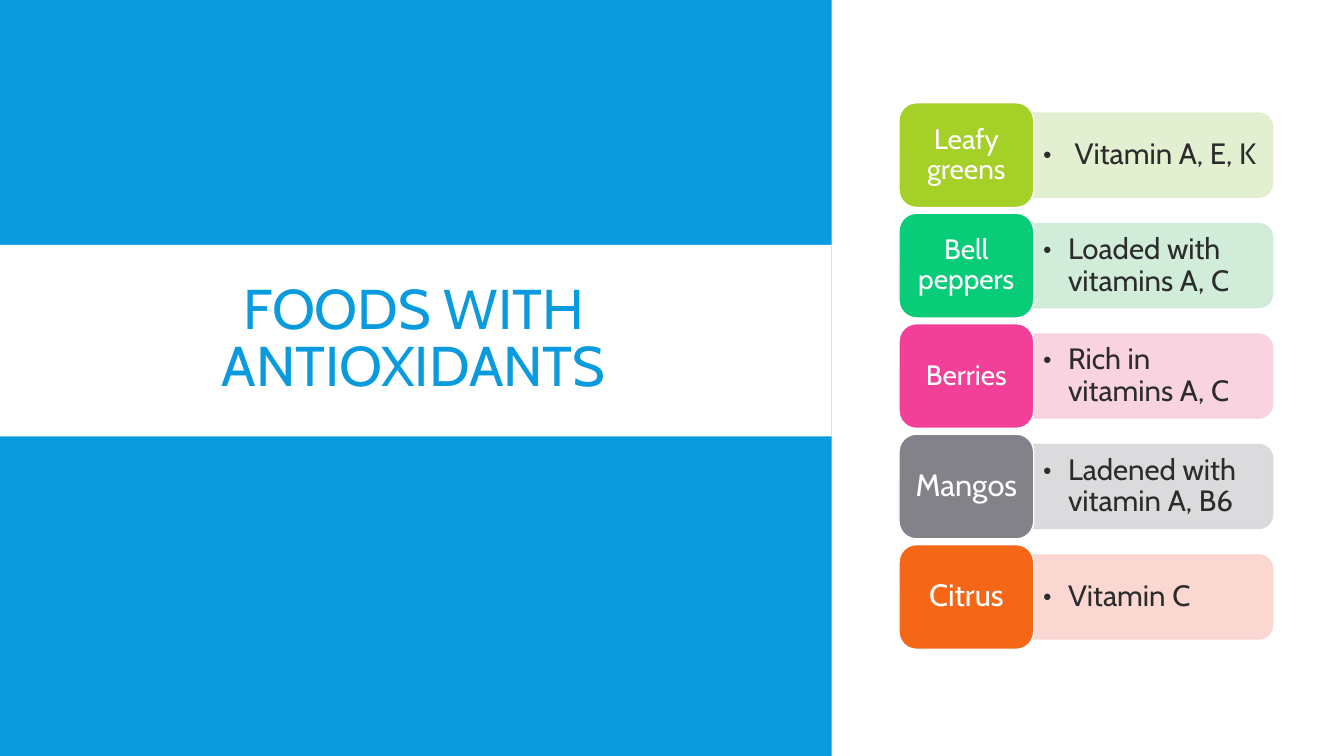
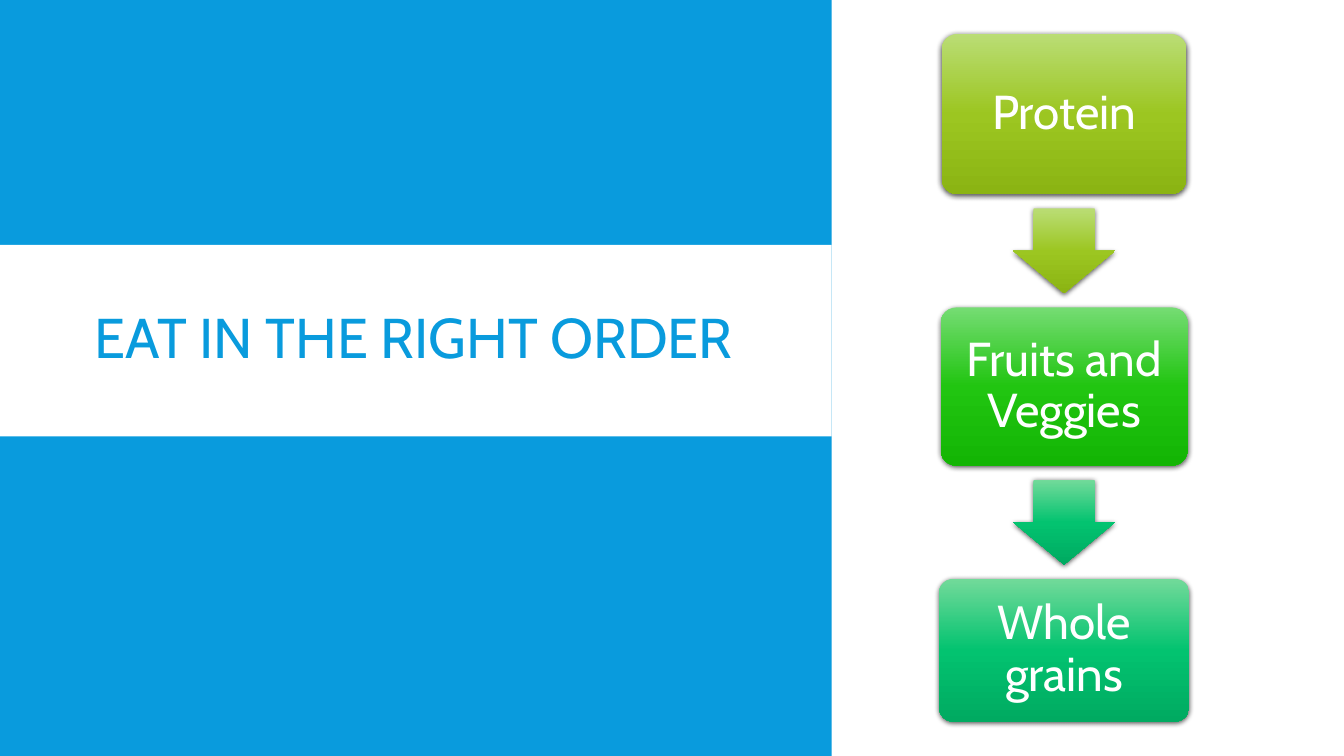
"""Two nutrition slides with a shared title panel."""
from dataclasses import dataclass
from typing import NamedTuple

from lxml import etree
from pptx import Presentation
from pptx.dml.color import RGBColor
from pptx.enum.shapes import MSO_SHAPE
from pptx.enum.text import MSO_ANCHOR, PP_ALIGN
from pptx.oxml.ns import qn
from pptx.util import Pt

RECTANGLE = MSO_SHAPE.RECTANGLE
ROUNDED = MSO_SHAPE.ROUNDED_RECTANGLE
ROUNDED_TOP = MSO_SHAPE.ROUND_2_SAME_RECTANGLE
DOWN_ARROW = MSO_SHAPE.DOWN_ARROW
MIDDLE = MSO_ANCHOR.MIDDLE
CENTER, LEFT = PP_ALIGN.CENTER, PP_ALIGN.LEFT


class Box(NamedTuple):
    """A rectangle in points."""
    left: float
    top: float
    width: float
    height: float

    def inside(self, left, top, width, height):
        """Return a box placed relative to this one."""
        return Box(self.left + left, self.top + top, width, height)

    def lengths(self):
        """Return the four lengths for python-pptx."""
        return [Pt(value) for value in self]


@dataclass(frozen=True)
class Theme:
    """Colours, font and type sizes of the deck."""
    font: str = "Cabin"
    blue: str = "099BDD"
    white: str = "FFFFFF"
    ink: str = "2C2C2C"
    black: str = "000000"
    lime: tuple = ("BADD75", "9CC621", "8BB413")
    green: tuple = ("75DC73", "21C511", "13B504")
    jade: tuple = ("72DA9A", "03C370", "00AA61")
    title_size: float = 40
    step_size: float = 34
    detail_size: float = 21
    food_size: float = 20
    short_food_size: float = 22


THEME = Theme()
PAGE = Box(0, 0, 960, 540)
TITLE_PANEL = Box(0, 0, 594, 540)
FOOD_LIST = Box(642.2, 73.4, 266.8, 390.4)
STEP_FLOW = Box(670.8, 24.2, 178.6, 491.3)

FOODS = [
    ("Leafy greens", " Vitamin A, E, K", "A5D028", "E1EECD", THEME.food_size),
    ("Bell peppers", "Loaded with vitamins A, C", "08CC78", "CCECD6", THEME.food_size),
    ("Berries", "Rich in vitamins A, C", "F24099", "FACFDE", THEME.food_size),
    ("Mangos", "Ladened with vitamin A, B6", "828288", "D8D8DA", THEME.short_food_size),
    ("Citrus", "Vitamin C", "F56617", "FBD3CC", THEME.short_food_size),
]
STEPS = [
    ("Protein", 175, 114.5, THEME.lime, THEME.lime),
    ("Fruits and Veggies", 176.4, 113, THEME.green, THEME.jade),
    ("Whole grains", 178.6, 102, THEME.jade, None),
]


def add_node(parent, tag, **attributes):
    """Append a DrawingML element and return it."""
    node = etree.SubElement(parent, qn(tag))
    for name, value in attributes.items():
        node.set(name, str(value))
    return node


def add_shape(page, kind, box, fill=None, line=None):
    """Add a shadowless preset shape with a plain fill and line."""
    shape = page.shapes.add_shape(kind, *box.lengths())
    shape.shadow.inherit = False
    if fill:
        shape.fill.solid()
        shape.fill.fore_color.rgb = RGBColor.from_string(fill)
    if line:
        shape.line.color.rgb = RGBColor.from_string(line)
        shape.line.width = Pt(1)
    else:
        shape.line.fill.background()
    return shape


def write(shape, text, size, color, align=CENTER, spacing=0.9, insets=(7.2, 3.6)):
    """Write one vertically centred paragraph and return it."""
    frame = shape.text_frame
    frame.word_wrap = True
    frame.vertical_anchor = MIDDLE
    frame.margin_left = frame.margin_right = Pt(insets[0])
    frame.margin_top = frame.margin_bottom = Pt(insets[1])
    para = frame.paragraphs[0]
    para.text = text
    para.alignment = align
    para.line_spacing = spacing
    para.font.name = THEME.font
    para.font.size = Pt(size)
    para.font.color.rgb = RGBColor.from_string(color)
    return para


def make_bullet(para, indent):
    """Give a paragraph a round bullet with a hanging indent."""
    properties = para._p.get_or_add_pPr()
    properties.set("marL", str(Pt(indent)))
    properties.set("indent", str(-Pt(indent)))
    run_defaults = properties.find(qn("a:defRPr"))
    run_defaults.addprevious(etree.Element(qn("a:buFont"), typeface=THEME.font))
    run_defaults.addprevious(etree.Element(qn("a:buChar"), char="•"))


def make_translucent(shape, percent):
    """Set the opacity of the fill and line."""
    for color in list(shape._element.spPr.iter(qn("a:srgbClr"))):
        add_node(color, "a:alpha", val=percent * 1000)


def make_glossy(shape, colors):
    """Give a shape a vertical three-colour gradient and a soft shadow."""
    shape.fill.gradient()
    shape.fill.gradient_angle = 270
    properties = shape._element.spPr
    stops = properties.find(".//" + qn("a:gsLst"))
    for stop in list(stops):
        stops.remove(stop)
    for position, color in zip((0, 50, 100), colors):
        stop = add_node(stops, "a:gs", pos=position * 1000)
        add_node(stop, "a:srgbClr", val=color)
    shadow = add_node(properties.find(qn("a:effectLst")), "a:outerShdw",
                      blurRad=Pt(4), dist=Pt(1.2), dir=90 * 60000, rotWithShape=0)
    add_node(add_node(shadow, "a:srgbClr", val=THEME.black), "a:alpha", val=68000)


def add_title_panel(page, box, title):
    """Draw the blue panel with its white title band."""
    add_shape(page, RECTANGLE, box, THEME.blue)
    add_shape(page, RECTANGLE, box.inside(0, 175, box.width, 136.8), THEME.white)
    title_box = page.shapes.add_textbox(*box.inside(59, 184.3, 473, 118.8).lengths())
    write(title_box, title, THEME.title_size, THEME.blue, spacing=0.85)


def add_food_row(page, box, food, detail, color, tint, size):
    """Draw one food tile with its detail bar."""
    tile_width, bar_height = 96.2, 60
    bar_left = tile_width - 1
    bar_width = box.width - bar_left
    bar = add_shape(page, ROUNDED_TOP,
                    box.inside(bar_left + (bar_width - bar_height) / 2,
                               (box.height - bar_width) / 2, bar_height, bar_width),
                    tint, tint)
    bar.rotation = 90
    make_translucent(bar, 90)
    detail_box = page.shapes.add_textbox(
        *box.inside(tile_width, (box.height - 54) / 2, 167.6, 54).lengths())
    para = write(detail_box, detail, THEME.detail_size, THEME.ink, LEFT, insets=(6.5, 3))
    make_bullet(para, 18)
    tile = add_shape(page, ROUNDED, box.inside(0, 0, tile_width, box.height),
                     color, THEME.white)
    write(tile, food, size, THEME.white, insets=(5, 3))


def add_food_list(page, box):
    """Stack the food rows at equal gaps."""
    row_height = 74.8
    pitch = (box.height - row_height) / (len(FOODS) - 1)
    for index, food in enumerate(FOODS):
        add_food_row(page, box.inside(0, index * pitch, box.width, row_height), *food)


def add_step_flow(page, box):
    """Stack the steps with arrows between them."""
    gap, arrow_width, arrow_height = 10.2, 72.7, 60.5
    top = 0
    for text, width, height, colors, arrow_colors in STEPS:
        step = add_shape(page, ROUNDED,
                         box.inside((box.width - width) / 2, top, width, height))
        step.adjustments[0] = 0.1
        make_glossy(step, colors)
        write(step, text, THEME.step_size, THEME.white, insets=(10, 10))
        top += height + gap
        if arrow_colors:
            arrow = add_shape(page, DOWN_ARROW,
                              box.inside((box.width - arrow_width) / 2, top,
                                         arrow_width, arrow_height))
            arrow.adjustments[0] = 0.6
            arrow.adjustments[1] = 0.5
            make_glossy(arrow, arrow_colors)
            top += arrow_height + gap


def add_page(deck, title, add_content, box):
    """Add a slide with the title panel and its content region."""
    page = deck.slides.add_slide(deck.slide_layouts[6])
    add_title_panel(page, TITLE_PANEL, title)
    add_content(page, box)


def main():
    """Build and save the deck."""
    deck = Presentation()
    deck.slide_width, deck.slide_height = Pt(PAGE.width), Pt(PAGE.height)
    add_page(deck, "FOODS WITH ANTIOXIDANTS", add_food_list, FOOD_LIST)
    add_page(deck, "EAT IN THE RIGHT ORDER", add_step_flow, STEP_FLOW)
    deck.save("out.pptx")


if __name__ == "__main__":
    main()
